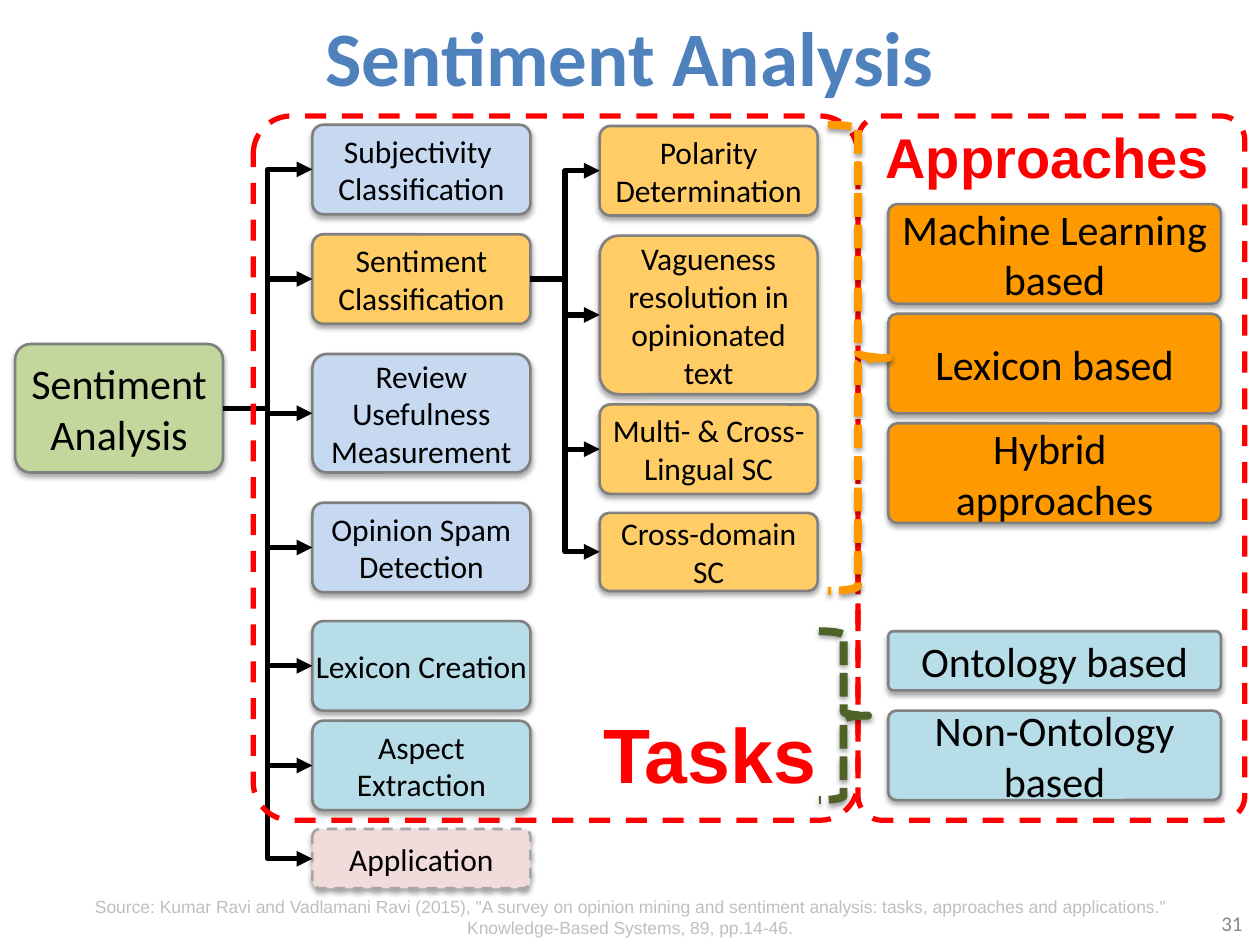
from dataclasses import dataclass

from lxml import etree
from pptx import Presentation
from pptx.dml.color import RGBColor
from pptx.enum.dml import MSO_LINE
from pptx.enum.shapes import MSO_CONNECTOR, MSO_SHAPE
from pptx.enum.text import MSO_ANCHOR, PP_ALIGN
from pptx.oxml.ns import qn
from pptx.util import Inches, Pt

ROUNDED = MSO_SHAPE.ROUNDED_RECTANGLE
BRACE = MSO_SHAPE.RIGHT_BRACE
ELBOW = MSO_CONNECTOR.ELBOW
DASH = MSO_LINE.DASH
SHORT_DASH = MSO_LINE.SQUARE_DOT
TOP, MIDDLE = MSO_ANCHOR.TOP, MSO_ANCHOR.MIDDLE
LEFT, CENTER, RIGHT = PP_ALIGN.LEFT, PP_ALIGN.CENTER, PP_ALIGN.RIGHT
LEFT_SIDE, RIGHT_SIDE = 1, 3


@dataclass(frozen=True)
class Theme:
    body_font: str = "Calibri"
    label_font: str = "Arial"
    title: str = "4F81BD"
    black: str = "000000"
    gray: str = "808080"
    light_gray: str = "A6A6A6"
    number: str = "898989"
    source: str = "BFBFBF"
    red: str = "FF0000"
    green: str = "C3D69B"
    dark_green: str = "4F6228"
    blue: str = "C6D9F1"
    teal: str = "B7DEE8"
    yellow: str = "FFCC66"
    orange: str = "FF9900"
    pink: str = "F2DCDB"
    heading_size: int = 44
    group_size: int = 32
    large_size: int = 24
    node_size: int = 18
    number_size: int = 12
    source_size: int = 10


class Diagram:
    def __init__(self, slide, theme):
        self.slide = slide
        self.theme = theme

    def add_runs(self, frame, text, size, color, font, bold=False, align=CENTER, anchor=MIDDLE):
        frame.vertical_anchor = anchor
        paragraph = frame.paragraphs[0]
        paragraph.alignment = align
        for index, line in enumerate(text.split("\n")):
            if index:
                paragraph.add_line_break()
            run = paragraph.add_run()
            run.text = line
            run.font.size = Pt(size)
            run.font.name = font
            run.font.bold = bold
            run.font.color.rgb = RGBColor.from_string(color)

    def label(self, box, text, size, color, font, wrap=True, **style):
        shape = self.slide.shapes.add_textbox(*map(Inches, box))
        shape.text_frame.word_wrap = wrap
        self.add_runs(shape.text_frame, text, size, color, font, **style)

    def outline(self, kind, box, color, width, dash=None):
        shape = self.slide.shapes.add_shape(kind, *map(Inches, box))
        shape.shadow.inherit = False
        shape.fill.background()
        shape.line.color.rgb = RGBColor.from_string(color)
        shape.line.width = Pt(width)
        if dash:
            shape.line.dash_style = dash
        return shape

    def add_shadow(self, shape, opacity, distance):
        effects = shape._element.spPr.find(qn("a:effectLst"))
        shadow = etree.SubElement(
            effects, qn("a:outerShdw"), blurRad=str(Pt(3.1)), dist=str(Pt(distance)),
            dir="5400000", rotWithShape="0")
        color = etree.SubElement(shadow, qn("a:srgbClr"), val=self.theme.black)
        etree.SubElement(color, qn("a:alpha"), val=str(opacity * 1000))

    def node(self, box, text, fill, size, rounding=0.122, line=None, dash=None):
        shape = self.outline(ROUNDED, box, line or self.theme.gray, 1.5, dash)
        shape.adjustments[0] = rounding
        shape.fill.solid()
        shape.fill.fore_color.rgb = RGBColor.from_string(fill)
        self.add_shadow(shape, 35, 1.8)
        frame = shape.text_frame
        frame.word_wrap = True
        frame.margin_left = frame.margin_right = frame.margin_top = frame.margin_bottom = 0
        self.add_runs(frame, text, size, self.theme.black, self.theme.body_font)
        return shape

    def column(self, left, width, rows, size, rounding=0.122):
        return [self.node((left, top, width, height), text, fill, size, rounding)
                for top, height, text, fill in rows]

    def frame(self, box):
        shape = self.outline(ROUNDED, box, self.theme.red, 3, DASH)
        shape.adjustments[0] = 0.063

    def brace(self, box, color):
        shape = self.outline(BRACE, box, color, 4.5, SHORT_DASH)
        self.add_shadow(shape, 38, 1.6)

    def branch(self, parent, children):
        for child in children:
            connector = self.slide.shapes.add_connector(ELBOW, 0, 0, 0, 0)
            connector.begin_connect(parent, RIGHT_SIDE)
            connector.end_connect(child, LEFT_SIDE)
            connector.line.color.rgb = RGBColor.from_string(self.theme.black)
            connector.line.width = Pt(3)
            etree.SubElement(connector.get_or_add_ln(), qn("a:tailEnd"), type="triangle")
            etree.SubElement(connector._element.spPr, qn("a:effectLst"))


def main():
    presentation = Presentation()
    presentation.slide_width = Inches(10)
    presentation.slide_height = Inches(7.5)
    theme = Theme()
    diagram = Diagram(presentation.slides.add_slide(presentation.slide_layouts[6]), theme)

    diagram.label((0.5, 0, 9, 0.89), "Sentiment Analysis", theme.heading_size,
                  theme.title, theme.body_font, bold=True)
    diagram.label((9.14, 7.13, 0.82, 0.4), "31", theme.number_size,
                  theme.number, theme.body_font, align=RIGHT)
    diagram.label(
        (0.53, 7.06, 8.94, 0.44),
        'Source: Kumar Ravi and Vadlamani Ravi (2015), "A survey on opinion mining and '
        'sentiment analysis: tasks, approaches and applications." '
        'Knowledge-Based Systems, 89, pp.14-46.',
        theme.source_size, theme.source, theme.label_font, anchor=TOP)

    root = diagram.node((0.12, 2.73, 1.65, 1.02), "Sentiment Analysis",
                        theme.green, theme.large_size)
    tasks = diagram.column(2.48, 1.73, [
        (0.99, 0.71, "Subjectivity \nClassification", theme.blue),
        (1.86, 0.71, "Sentiment Classification", theme.yellow),
        (2.81, 0.94, "Review Usefulness Measurement", theme.blue),
        (3.99, 0.71, "Opinion Spam Detection", theme.blue),
        (4.93, 0.71, "Lexicon Creation", theme.teal),
        (5.72, 0.71, "Aspect Extraction", theme.teal),
    ], theme.node_size)
    application = diagram.node((2.48, 6.58, 1.73, 0.47), "Application", theme.pink,
                               theme.node_size, line=theme.light_gray, dash=DASH)
    subtasks = diagram.column(4.76, 1.73, [
        (1, 0.71, "Polarity Determination", theme.yellow),
        (1.87, 1.26, "Vagueness resolution in opinionated text", theme.yellow),
        (3.21, 0.71, "Multi- & Cross- Lingual SC", theme.yellow),
        (4.07, 0.62, "Cross-domain SC", theme.yellow),
    ], theme.node_size)
    diagram.column(7.05, 2.64, [
        (1.62, 0.79, "Machine Learning based", theme.orange),
        (2.49, 0.79, "Lexicon based", theme.orange),
        (3.36, 0.79, "Hybrid \napproaches", theme.orange),
        (5.01, 0.47, "Ontology based", theme.teal),
        (5.64, 0.71, "Non-Ontology based", theme.teal),
    ], theme.large_size, rounding=0.089)

    diagram.branch(root, tasks + [application])
    diagram.frame((2.01, 0.92, 4.8, 5.59))
    diagram.label((4.69, 5.56, 1.91, 0.84), "Tasks", theme.heading_size, theme.red,
                  theme.label_font, wrap=False, bold=True, align=LEFT, anchor=TOP)
    diagram.frame((6.81, 0.92, 3.07, 5.59))
    diagram.label((6.93, 0.92, 2.8, 0.64), "Approaches", theme.group_size, theme.red,
                  theme.label_font, wrap=False, bold=True, align=LEFT, anchor=TOP)
    diagram.brace((6.5, 5.01, 0.39, 1.34), theme.dark_green)
    diagram.brace((6.57, 0.99, 0.48, 3.7), theme.orange)
    diagram.branch(tasks[1], subtasks)

    presentation.save("out.pptx")


if __name__ == "__main__":
    main()
